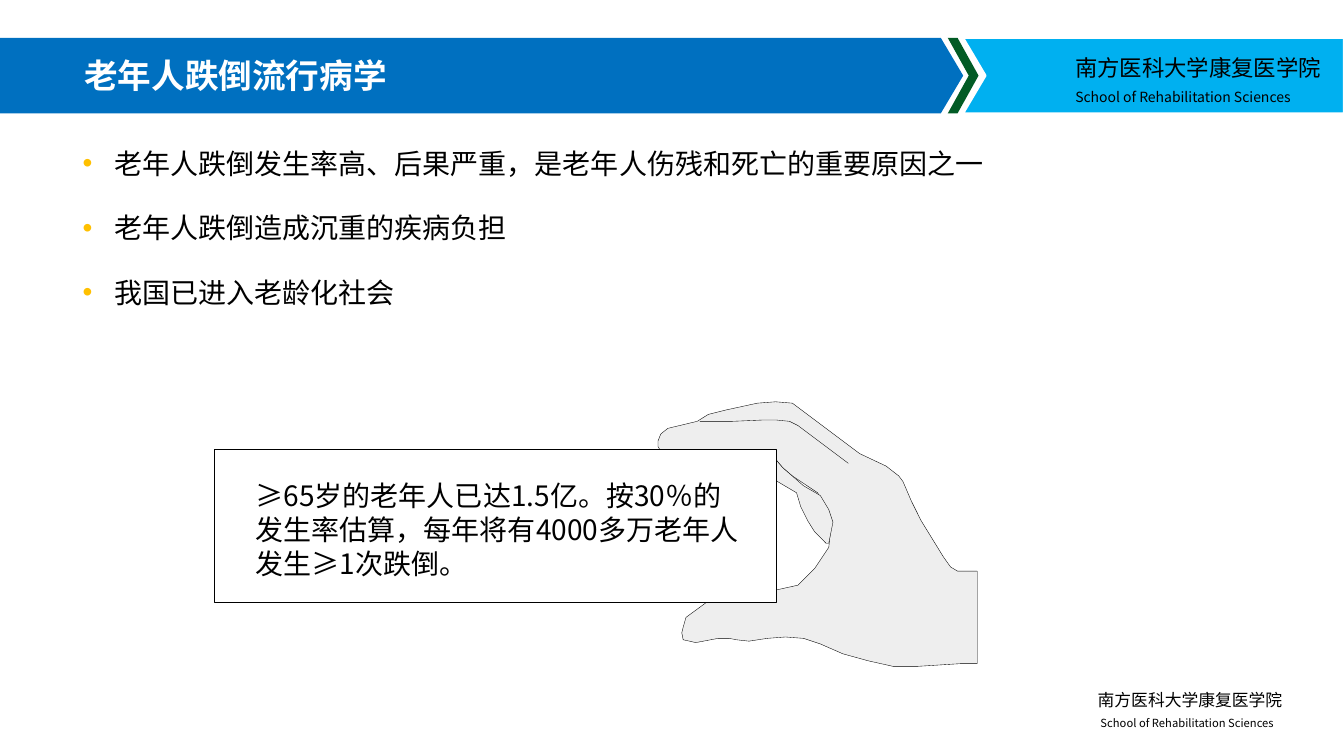
from lxml import etree
from pptx import Presentation
from pptx.dml.color import RGBColor
from pptx.enum.shapes import MSO_SHAPE
from pptx.enum.text import MSO_ANCHOR, MSO_AUTO_SIZE, PP_ALIGN
from pptx.oxml.ns import qn
from pptx.util import Pt

RECTANGLE = MSO_SHAPE.RECTANGLE
MIDDLE, TOP = MSO_ANCHOR.MIDDLE, MSO_ANCHOR.TOP
LEFT = PP_ALIGN.LEFT
NO_FIT = MSO_AUTO_SIZE.NONE

BLACK = RGBColor(0x00, 0x00, 0x00)
WHITE = RGBColor(0xFF, 0xFF, 0xFF)
BLUE = RGBColor(0x00, 0x70, 0xC0)
GREEN = RGBColor(0x02, 0x5B, 0x25)
SKY = RGBColor(0x00, 0xB0, 0xF0)
AMBER = RGBColor(0xFF, 0xC0, 0x00)
SKIN = RGBColor(0xEE, 0xEE, 0xEE)

SANS = "Noto Sans CJK SC"
SANS_JP = "Noto Sans CJK JP"
PAGE_WIDTH, PAGE_HEIGHT = 960, 540

SCHOOL = "南方医科大学康复医学院"
SCHOOL_ENGLISH = "School of Rehabilitation Sciences"
POINTS = [
    "老年人跌倒发生率高、后果严重，是老年人伤残和死亡的重要原因之一",
    "老年人跌倒造成沉重的疾病负担",
    "我国已进入老龄化社会",
]
FINDING = "≥65岁的老年人已达1.5亿。按30％的发生率估算，每年将有4000多万老年人发生≥1次跌倒。"

# Outlines in points, relative to the top left corner of the hand
HAND = [
    (36, 8.6), (49, 5.8), (71.3, 0.7), (85, 0), (96.5, 0.7), (112.3, 13),
    (128.2, 24.5), (136, 31), (144.7, 37.4), (163.4, 46), (172.8, 52.6),
    (175.7, 56.9), (181.4, 70.6), (188.6, 85), (204.5, 110.9), (209.5, 118),
    (214.6, 121), (229, 121), (229, 186.5), (217.4, 186.5), (185.8, 188.6),
    (168.5, 188.6), (150.5, 185), (132.5, 180), (116.6, 172.8),
    (104.4, 168.5), (91.4, 167.8), (78.5, 168.5), (65.5, 170.6), (56.9, 170),
    (51.8, 168.5), (43.2, 168.5), (27.4, 172), (18.7, 170), (17.3, 164.9),
    (18, 160.6), (20.9, 154), (35.3, 142.6), (82, 142.6), (82, 134.6),
    (100, 131), (113, 119.5), (122.4, 103.7), (124.6, 85), (120.2, 74.9),
    (114.5, 65.5), (96.5, 52.6), (89.3, 46.8), (84.2, 41), (82, 41.8),
    (82, 36.7), (3.6, 36.7), (0.7, 32.4), (0, 28), (2.2, 23), (7.2, 19.4),
    (28, 14.4),
]
INNER_FINGER = [
    (84.2, 41), (89.3, 46.8), (105, 59.8), (116.6, 67), (122.4, 77),
    (125.3, 85.7), (122.4, 101.5), (120.2, 100.8), (112.3, 92.9), (107.3, 85),
    (102.2, 74.9), (99.4, 64.8), (82, 55.4), (82, 41.8),
]
FINGER_CREASE = [
    (136, 43.9), (100, 16.6), (94.3, 13.7), (85, 13), (76.3, 13),
    (53.3, 13.7), (30.2, 14.4),
]


def paint(shape, fill, line=None, weight=0.25):
    shape.shadow.inherit = False
    shape.fill.solid()
    shape.fill.fore_color.rgb = fill
    if line is None:
        shape.line.fill.background()
    else:
        shape.line.color.rgb = line
        shape.line.width = Pt(weight)


def add_outline(page, left, top, corners, closed=True):
    moved = [(left + x, top + y) for x, y in corners]
    builder = page.shapes.build_freeform(*moved[0], scale=float(Pt(1)))
    builder.add_line_segments(moved[1:], close=closed)
    return builder.convert_to_shape()


def write(para, text, size, color=BLACK, face=SANS, bold=False):
    span = para.add_run()
    span.text = text
    formats = {"name": face, "size": Pt(size), "bold": bold}
    for name, value in formats.items():
        setattr(span.font, name, value)
    span.font.color.rgb = color
    east_asian = etree.SubElement(span.font._element, qn("a:ea"))
    east_asian.set("typeface", face)


def place(box, left, top, width, height, wrap=True, anchor=TOP):
    sides = {"left": left, "top": top, "width": width, "height": height}
    for name, value in sides.items():
        setattr(box, name, Pt(value))
    formats = {"word_wrap": wrap, "auto_size": NO_FIT, "vertical_anchor": anchor}
    for name, value in formats.items():
        setattr(box.text_frame, name, value)
    return box.text_frame


def add_text_box(page, left, top, width, height, **formats):
    box = page.shapes.add_textbox(0, 0, 0, 0)
    return place(box, left, top, width, height, **formats)


def add_bullet(para):
    properties = para._p.get_or_add_pPr()
    properties.set("marL", str(Pt(22.5)))
    properties.set("indent", str(-Pt(22.5)))
    color = etree.SubElement(properties, qn("a:buClr"))
    etree.SubElement(color, qn("a:srgbClr")).set("val", str(AMBER))
    etree.SubElement(properties, qn("a:buFont")).set("typeface", "Arial")
    etree.SubElement(properties, qn("a:buChar")).set("char", "•")


def add_school_name(page, left, top, size, english_left, english_top, english_size):
    lines = [
        (SCHOOL, left, top, size, SANS_JP),
        (SCHOOL_ENGLISH, english_left, english_top, english_size, SANS),
    ]
    for text, x, y, points, face in lines:
        frame = add_text_box(page, x, y, PAGE_WIDTH - x, points * 1.65, wrap=False)
        write(frame.paragraphs[0], text, points, face=face)


def add_header(page, title, top, height):
    middle = height / 2
    banner = [(0, 0), (672, 0), (688, middle), (672, height), (0, height)]
    chevron = [(677, 0), (683.5, 0), (699, middle), (683.5, height),
               (677, height), (692.5, middle)]
    panel = [(688, 0), (PAGE_WIDTH, 0), (PAGE_WIDTH, height), (688, height),
             (704, middle)]
    paint(add_outline(page, 0, top, banner), BLUE)
    paint(add_outline(page, 0, top, chevron), GREEN)
    paint(add_outline(page, 0, top, panel), SKY, WHITE, 1.5)
    add_school_name(page, 761, top + 8, 16, 761, top + 32.5, 10)

    heading = page.shapes.title
    # The placeholder comes first on the page, so bring it in front of the banner
    heading._element.getparent().append(heading._element)
    frame = place(heading, 53, top + 4.5, 598, 47.5, anchor=MIDDLE)
    para = frame.paragraphs[0]
    para.alignment = LEFT
    para.line_spacing = 0.9
    write(para, title, 24, WHITE, bold=True)


def add_points(page, left, top, width, height):
    frame = add_text_box(page, left, top, width, height)
    for number, text in enumerate(POINTS):
        para = frame.paragraphs[0] if number == 0 else frame.add_paragraph()
        add_bullet(para)
        para.line_spacing = 1.5
        if number:
            para.space_before = Pt(10)
        write(para, text, 20)


def add_hand_with_card(page, left, top, width, height):
    """Draw a hand that holds a card; the box is that of the card."""
    hand_left, hand_top = left + 316.5, top - 34
    outlines = [(HAND, True), (INNER_FINGER, True), (FINGER_CREASE, False)]
    for corners, closed in outlines:
        paint(add_outline(page, hand_left, hand_top, corners, closed), SKIN, BLACK)

    card = page.shapes.add_shape(RECTANGLE, Pt(left), Pt(top), Pt(width), Pt(height))
    paint(card, WHITE, BLACK)
    frame = add_text_box(page, left + 22.5, top + 17.5, 366, 79, anchor=MIDDLE)
    write(frame.paragraphs[0], FINDING, 20)


def main():
    deck = Presentation()
    deck.slide_width, deck.slide_height = Pt(PAGE_WIDTH), Pt(PAGE_HEIGHT)
    page = deck.slides.add_slide(deck.slide_layouts[5])
    add_header(page, "老年人跌倒流行病学", 27, 54)
    add_points(page, 52, 89, 855, 394)
    add_hand_with_card(page, 153, 321, 401.5, 109)
    add_school_name(page, 777, 489, 12, 779, 508, 8)
    deck.save("out.pptx")


if __name__ == "__main__":
    main()
